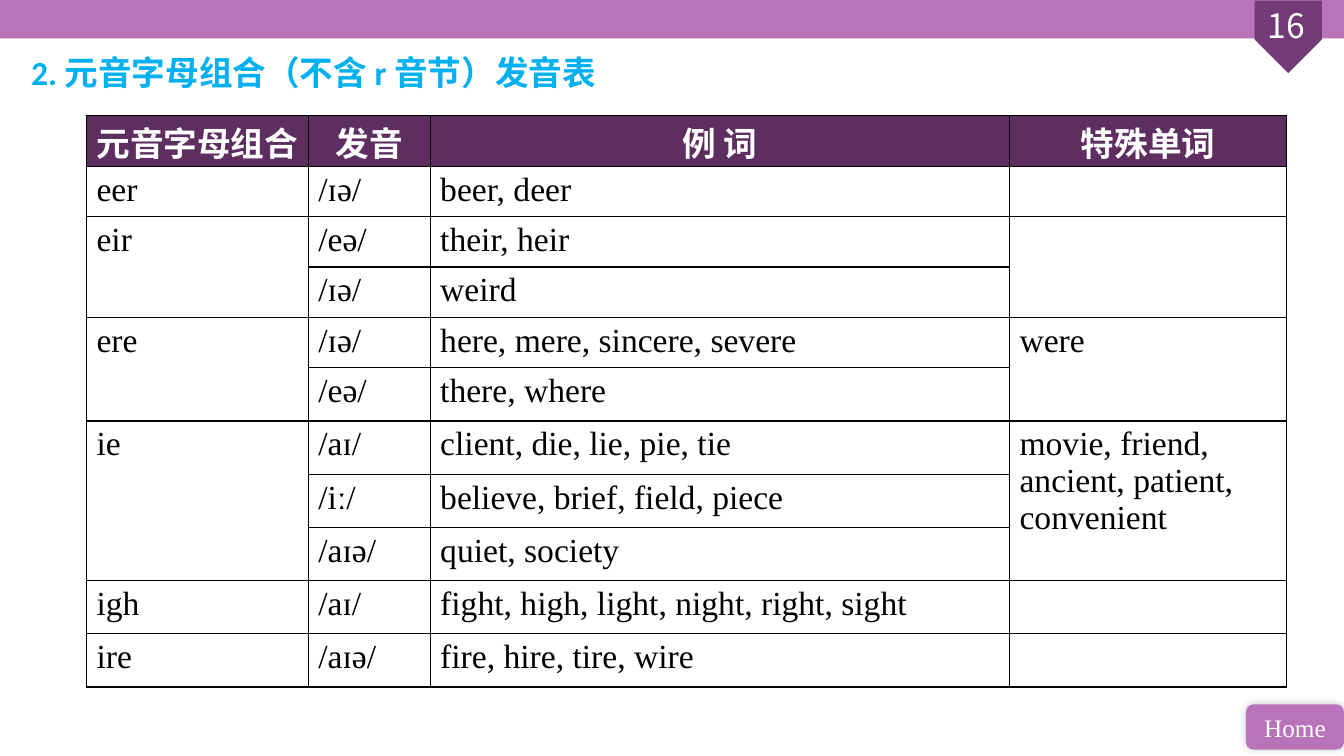
from lxml.etree import SubElement
from pptx import Presentation
from pptx.dml.color import RGBColor as RGB
from pptx.enum.shapes import MSO_SHAPE as Shape
from pptx.enum.text import MSO_ANCHOR as Anchor, MSO_AUTO_SIZE as AutoSize, PP_ALIGN as Align
from pptx.oxml.ns import qn
from pptx.util import Cm, Pt

# Content
TITLE = "2. 元音字母组合（不含 r 音节）发音表"
PAGE = "16"
HOME = "Home"
HEADINGS = ["元音字母组合", "发音", "例 词", "特殊单词"]
# letters, special words, [(sound, examples)]
GROUPS = [
    ("eer", "", [("/ɪə/", "beer, deer")]),
    ("eir", "", [("/eə/", "their, heir"), ("/ɪə/", "weird")]),
    ("ere", "were", [("/ɪə/", "here, mere, sincere, severe"),
                     ("/eə/", "there, where")]),
    ("ie", "movie, friend, ancient, patient,\nconvenient",
     [("/aɪ/", "client, die, lie, pie, tie"),
      ("/iː/", "believe, brief, field, piece"),
      ("/aɪə/", "quiet, society")]),
    ("igh", "", [("/aɪ/", "fight, high, light, night, right, sight")]),
    ("ire", "", [("/aɪə/", "fire, hire, tire, wire")]),
]


class Theme:
    band, badge, header = RGB(0xB8, 0x73, 0xBB), RGB(0x74, 0x3A, 0x78), RGB(0x5D, 0x2E, 0x5F)
    title, ink, paper = RGB(0x00, 0xB0, 0xF0), RGB(0, 0, 0), RGB(255, 255, 255)
    serif, sans, cjk = "Times New Roman", "Calibri", "Noto Sans CJK SC"
    large, small = Pt(24), Pt(18)
    body_line = Pt(26.4)


# Geometry in centimetres
SLIDE_W, SLIDE_H = 33.87, 19.05
TABLE_LEFT, TABLE_TOP = 2.18, 2.92
COLUMNS = [5.59, 3.07, 14.6, 6.99]
ROWS = [1.27] * 5 + [1.34] * 6


def write(frame, text, font, size, color, bold=False, align=Align.LEFT):
    frame.text = text
    for paragraph in frame.paragraphs:
        paragraph.alignment = align
        for run in paragraph.runs:
            run.font.name, run.font.size = font, size
            run.font.bold, run.font.color.rgb = bold, color
            SubElement(run.font._element, qn("a:ea"), typeface=Theme.cjk)


def add_block(slide, kind, left, top, width, height, color):
    block = slide.shapes.add_shape(kind, Cm(left), Cm(top), Cm(width), Cm(height))
    block.shadow.inherit = False
    block.fill.solid()
    block.fill.fore_color.rgb = color
    block.line.fill.background()
    return block


def add_soft_shadow(block):
    effects = block._element.spPr.find(qn("a:effectLst"))
    shadow = SubElement(effects, qn("a:outerShdw"), blurRad=str(Pt(6)), dist="0",
                        dir="18900000", rotWithShape="0")
    black = SubElement(shadow, qn("a:srgbClr"), val=str(Theme.ink))
    SubElement(black, qn("a:alpha"), val="20000")


def draw_borders(cell):
    for side in ("lnL", "lnR", "lnT", "lnB"):
        line = SubElement(cell._tc.get_or_add_tcPr(), qn("a:" + side), w=str(Pt(1)))
        fill = SubElement(line, qn("a:solidFill"))
        SubElement(fill, qn("a:srgbClr"), val=str(Theme.ink))


def add_sound_table(slide):
    frame = slide.shapes.add_table(len(ROWS), len(COLUMNS), Cm(TABLE_LEFT), Cm(TABLE_TOP),
                                   Cm(sum(COLUMNS)), Cm(sum(ROWS)))
    table = frame.table
    table.first_row = table.horz_banding = False
    for column, width in zip(table.columns, COLUMNS):
        column.width = Cm(width)
    for row, height in zip(table.rows, ROWS):
        row.height = Cm(height)
    for cell in table.iter_cells():
        draw_borders(cell)
        cell.fill.background()

    # Header row
    for col, heading in enumerate(HEADINGS):
        cell = table.cell(0, col)
        cell.fill.solid()
        cell.fill.fore_color.rgb = Theme.header
        cell.vertical_anchor = Anchor.MIDDLE
        cell.margin_left = cell.margin_right = Cm(0.1)
        cell.margin_top, cell.margin_bottom = Cm(0.04), Cm(0)
        write(cell.text_frame, heading, Theme.serif, Theme.large, Theme.paper, True, Align.CENTER)

    # One merged block per letter group
    top = 1
    for letters, special, sounds in GROUPS:
        entries = [(top, 0, letters), (top, 3, special)]
        for row, (sound, examples) in enumerate(sounds, top):
            entries += [(row, 1, sound), (row, 2, examples)]
        for row, col, text in entries:
            if text:
                text_frame = table.cell(row, col).text_frame
                write(text_frame, text, Theme.serif, Theme.large, Theme.ink)
                for paragraph in text_frame.paragraphs:
                    paragraph.line_spacing = Theme.body_line
        bottom = top + len(sounds) - 1
        if bottom > top:
            for col in (0, 3):
                table.cell(top, col).merge(table.cell(bottom, col))
        top = bottom + 1


def main():
    deck = Presentation()
    deck.slide_width, deck.slide_height = Cm(SLIDE_W), Cm(SLIDE_H)
    slide = deck.slides.add_slide(deck.slide_layouts[5])

    # Top band and page badge
    add_block(slide, Shape.RECTANGLE, 0, 0, SLIDE_W, 0.97, Theme.band)
    badge = add_block(slide, Shape.PENTAGON, 31.55, 0.08, 1.83, 1.7, Theme.badge)
    badge.rotation = 90
    page = slide.shapes.add_textbox(Cm(31.17), Cm(0), Cm(2.49), Cm(1.27))
    page.text_frame.word_wrap = True
    write(page.text_frame, PAGE, Theme.cjk, Theme.large, Theme.paper, align=Align.CENTER)

    # Home button
    home = add_block(slide, Shape.ROUNDED_RECTANGLE, 31.4, 17.75, 2.47, 1.14, Theme.band)
    add_soft_shadow(home)
    home.text_frame.vertical_anchor = Anchor.MIDDLE
    write(home.text_frame, HOME, Theme.serif, Theme.small, Theme.paper, align=Align.CENTER)

    # Title
    title = slide.shapes.title
    title.left, title.top, title.width, title.height = Cm(0.53), Cm(1.17), Cm(31.17), Cm(1.27)
    title.text_frame.auto_size = AutoSize.NONE
    title.text_frame.vertical_anchor = Anchor.TOP
    write(title.text_frame, TITLE, Theme.sans, Theme.large, Theme.title, True)

    add_sound_table(slide)
    deck.save("out.pptx")


if __name__ == "__main__":
    main()
